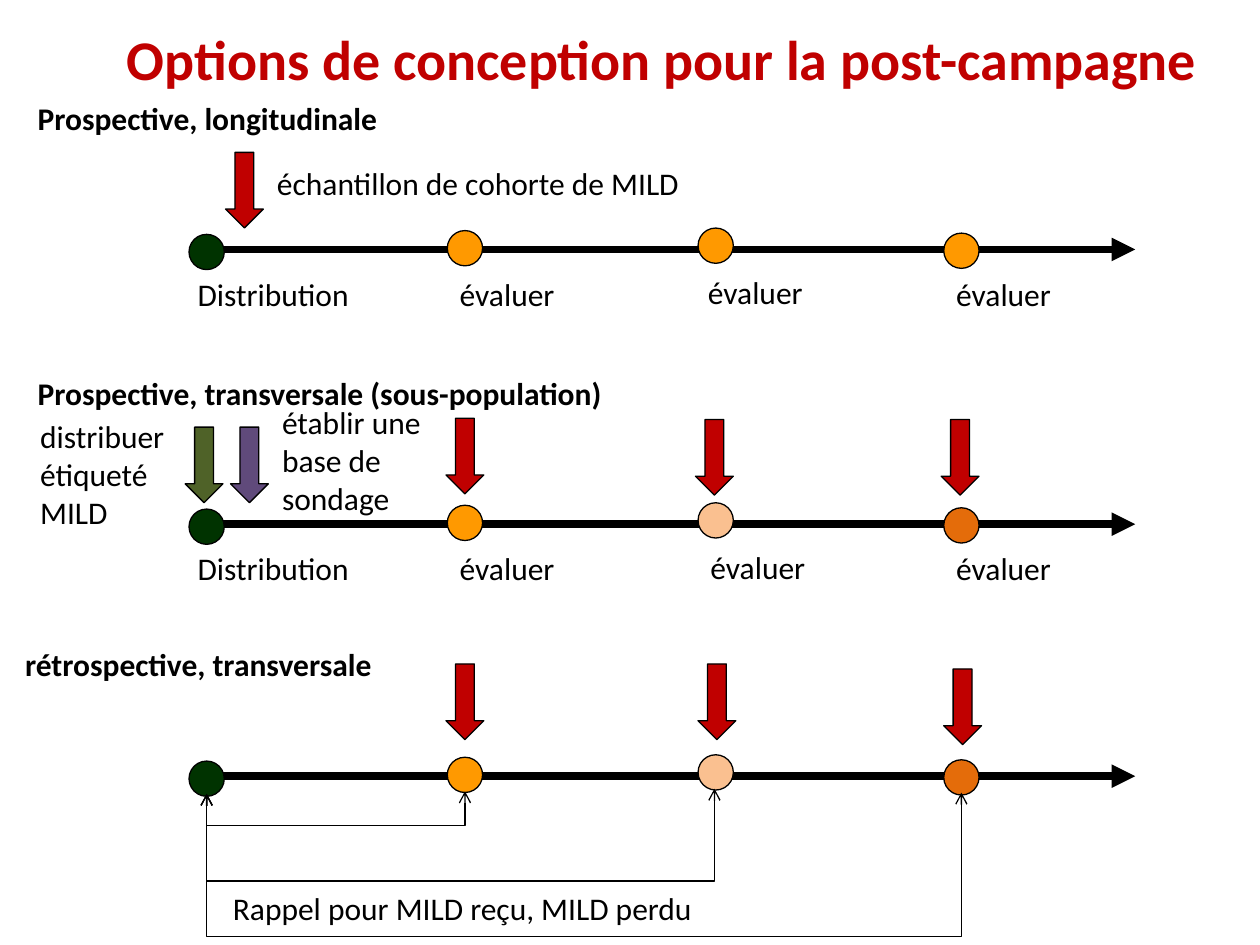
import pptx
import pptx.util
import pptx.dml.color
import pptx.enum.shapes
import pptx.enum.text
import pptx.oxml
import pptx.oxml.ns
from pptx.util import Inches

C = {"title": "C00000", "black": "000000", "green": "003300", "orange": "FF9900",
     "peach": "FAC090", "rust": "E46C0A", "red": "C00000", "olive": "4F6228",
     "purple": "604A7B"}
KIND = pptx.enum.shapes.MSO_SHAPE
LINE = pptx.enum.shapes.MSO_CONNECTOR
qn = pptx.oxml.ns.qn

prs = pptx.Presentation()
prs.slide_width, prs.slide_height = Inches(10), Inches(7.5)
s = prs.slides.add_slide(prs.slide_layouts[6])


def add_text(text, x, y, w, h=0.4, size=18, bold=False, color="black"):
    sp = s.shapes.add_textbox(Inches(x), Inches(y), Inches(w), Inches(h))
    tf = sp.text_frame
    tf.word_wrap = True
    p = tf.paragraphs[0]
    r = p.add_run()
    r.text = text
    r.font.name = "Calibri"
    r.font.size = pptx.util.Pt(size)
    r.font.bold = bold
    r.font.color.rgb = pptx.dml.color.RGBColor.from_string(C[color])
    return tf


def style_line(cx, width, **ends):
    cx.line.color.rgb = pptx.dml.color.RGBColor.from_string(C["black"])
    cx.line.width = pptx.util.Pt(width)
    ln = cx.line._get_or_add_ln()
    for tag, kind in ends.items():
        pptx.oxml.ns.qn(f"a:{tag}")
        ln.append(ln.makeelement(qn(f"a:{tag}"), {"type": kind}))
    spPr = cx.element.spPr
    spPr.append(spPr.makeelement(qn("a:effectLst"), {}))


tf = add_text("Options de conception pour la post-campagne", 0.6, -0.02, 9.31, 0.96, 32, True, "title")
tf.vertical_anchor = pptx.enum.text.MSO_ANCHOR.MIDDLE
tf.paragraphs[0].alignment = pptx.enum.text.PP_ALIGN.CENTER

dots = [(1.5, -0.12), (3.55, -0.15), (5.54, -0.17), (7.49, -0.13)]
timelines = [
    (1.98, ["green", "orange", "orange", "orange"]),
    (4.16, ["green", "orange", "peach", "rust"]),
    (6.16, ["green", "orange", "peach", "rust"]),
]
shapes = []
for y, colors in timelines:
    cx = s.shapes.add_connector(LINE.STRAIGHT, Inches(1.62), Inches(y), Inches(9.01), Inches(y))
    style_line(cx, 4.5, tailEnd="triangle")
    for (x, dy), color in zip(dots, colors):
        shapes.append((KIND.OVAL, x, y + dy, 0.28, 0.28, color))

arrows = [
    (1.79, 1.21, "red"),
    (1.47, 3.39, "olive"), (1.83, 3.39, "purple"),
    (3.54, 3.32, "red"), (5.52, 3.33, "red"), (7.47, 3.33, "red"),
    (3.54, 5.27, "red"), (5.54, 5.27, "red"), (7.49, 5.31, "red"),
]
shapes += [(KIND.DOWN_ARROW, x, y, 0.3, 0.6, color) for x, y, color in arrows]
for kind, x, y, w, h, color in shapes:
    sp = s.shapes.add_shape(kind, Inches(x), Inches(y), Inches(w), Inches(h))
    sp.shadow.inherit = False
    sp.fill.solid()
    sp.fill.fore_color.rgb = pptx.dml.color.RGBColor.from_string(C[color])
    sp.line.color.rgb = pptx.dml.color.RGBColor.from_string(C["black"])
    sp.line.width = pptx.util.Pt(0.75)

recall_x, recall_y = 1.64, 6.3
for x, y, bottom in [(3.69, 6.28, 6.55), (5.67, 6.26, 6.99), (7.63, 6.29, 7.45)]:
    w, h = recall_y - y, x - recall_x
    left, top = (x + recall_x - w) / 2, (y + recall_y - h) / 2
    cx = s.shapes.add_connector(LINE.ELBOW, Inches(left), Inches(top), Inches(left + w), Inches(top + h))
    spPr = cx.element.spPr
    spPr.find(qn("a:xfrm")).set("rot", "5400000")
    av = spPr.find(qn("a:prstGeom")).find(qn("a:avLst"))
    bend = round((bottom - y) / w * 100000)
    av.append(av.makeelement(qn("a:gd"), {"name": "adj1", "fmla": f"val {bend}"}))
    style_line(cx, 0.75, headEnd="arrow", tailEnd="arrow")

for text, x, y, w in [
    ("Prospective, longitudinale", 0.2, 0.74, 5.47),
    ("Prospective, transversale (sous-population)", 0.2, 2.92, 5.47),
    ("rétrospective, transversale", 0.1, 5.07, 3.48),
]:
    add_text(text, x, y, w, bold=True)

for y, third_x in [(2.13, 5.52), (4.31, 5.54)]:
    add_text("Distribution", 1.47, y, 1.52)
    for x, dy in [(3.55, 0), (third_x, -0.01), (7.49, 0)]:
        add_text("évaluer", x, y + dy, 1.12)

add_text("échantillon de cohorte de MILD", 2.1, 1.25, 4)
add_text("distribuer étiqueté MILD", 0.22, 3.26, 1.61, 1.01)
add_text("établir une base de sondage", 2.14, 3.15, 1.4, 1.01)
add_text("Rappel pour MILD reçu, MILD perdu", 1.75, 7.01, 5.84)

prs.save("out.pptx")
